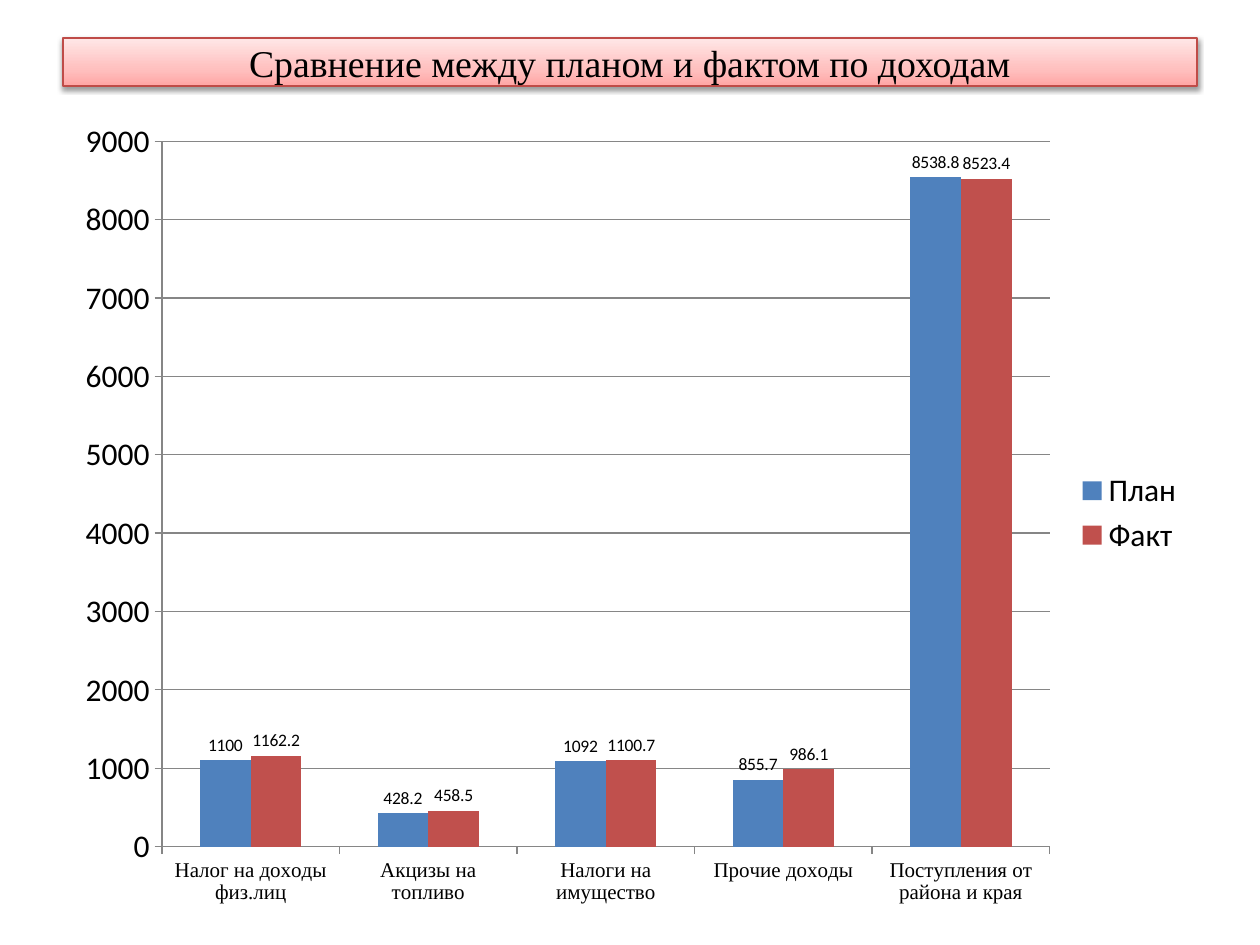
from copy import deepcopy

from lxml import etree
from pptx import Presentation
from pptx import util as u
from pptx.chart.data import CategoryChartData
from pptx.dml.color import RGBColor
from pptx.enum import chart as c
from pptx.enum import shapes, text
from pptx.oxml.ns import qn

PX = u.Inches(1) / 126
COLORS = {
    "text": "000000",
    "banner_bottom": "FFA6A5",
    "banner_middle": "FFC0BF",
    "banner_top": "FFE7E7",
    "banner_line": "BF4C48",
    "axis": "868686",
    "plan": "4F81BD",
    "fact": "C0504D",
}
BANNER_STOPS = [(0, "banner_bottom"), (0.35, "banner_middle"), (1, "banner_top")]
TITLE = "Сравнение между планом и фактом по доходам"
CATEGORIES = [
    "Налог на доходы физ.лиц",
    "Акцизы на топливо",
    "Налоги на имущество",
    "Прочие доходы",
    "Поступления от района и края",
]
SERIES = [
    ("План", "plan", [1100, 428.2, 1092, 855.7, 8538.8]),
    ("Факт", "fact", [1162.2, 458.5, 1100.7, 986.1, 8523.4]),
]


def box(*lengths):
    return [u.Emu(round(length * PX)) for length in lengths]


def color(name):
    return RGBColor.from_string(COLORS[name])


def style_font(font, size, name="Calibri"):
    font.size = u.Pt(size)
    font.name = name
    font.bold = False
    font.color.rgb = color("text")


def fill_gradient(shape, stops):
    shape.fill.gradient()
    shape.fill.gradient_angle = 90
    stop_list = shape._element.spPr.find(qn("a:gradFill")).find(qn("a:gsLst"))
    stop_list.append(deepcopy(stop_list[-1]))
    for stop, (position, name) in zip(shape.fill.gradient_stops, stops):
        stop.position = position
        stop.color.rgb = color(name)


def add_shadow(shape):
    shape.shadow.inherit = False
    effects = shape._element.spPr.find(qn("a:effectLst"))
    shadow = etree.SubElement(effects, qn("a:outerShdw"), blurRad="40000",
                              dist="20000", dir="5400000", rotWithShape="0")
    shade = etree.SubElement(shadow, qn("a:srgbClr"), val=COLORS["text"])
    etree.SubElement(shade, qn("a:alpha"), val="38000")


def add_banner(slide, title, *lengths):
    shape = slide.shapes.add_shape(shapes.MSO_SHAPE.RECTANGLE, *box(*lengths))
    fill_gradient(shape, BANNER_STOPS)
    shape.line.color.rgb = color("banner_line")
    shape.line.width = u.Pt(0.75)
    add_shadow(shape)
    frame = shape.text_frame
    frame.word_wrap = True
    frame.vertical_anchor = text.MSO_ANCHOR.MIDDLE
    paragraph = frame.paragraphs[0]
    paragraph.alignment = text.PP_ALIGN.CENTER
    run = paragraph.add_run()
    run.text = title
    style_font(run.font, 21.6, "Times New Roman")


def style_axis(axis, size, font_name):
    axis.major_tick_mark = c.XL_TICK_MARK.OUTSIDE
    axis.minor_tick_mark = c.XL_TICK_MARK.NONE
    axis.format.line.color.rgb = color("axis")
    axis.format.line.width = u.Pt(0.75)
    style_font(axis.tick_labels.font, size, font_name)


def style_series(series, name):
    series.format.fill.solid()
    series.format.fill.fore_color.rgb = color(name)
    series.invert_if_negative = False
    labels = series.data_labels
    labels.show_value = True
    labels.position = c.XL_LABEL_POSITION.OUTSIDE_END
    style_font(labels.font, 10)


def add_income_chart(slide, *lengths):
    data = CategoryChartData()
    data.categories = CATEGORIES
    for name, _, values in SERIES:
        data.add_series(name, values)
    chart = slide.shapes.add_chart(
        c.XL_CHART_TYPE.COLUMN_CLUSTERED, *box(*lengths), data).chart
    style_font(chart.font, 18)
    chart.has_title = False
    chart.has_legend = True
    chart.legend.position = c.XL_LEGEND_POSITION.RIGHT
    chart.legend.include_in_layout = False
    style_font(chart.legend.font, 18)
    style_axis(chart.category_axis, 12, "Times New Roman")
    style_axis(chart.value_axis, 18, "Calibri")
    chart.value_axis.has_major_gridlines = True
    gridline = chart.value_axis.major_gridlines.format.line
    gridline.color.rgb = color("axis")
    gridline.width = u.Pt(0.75)
    plot = chart.plots[0]
    plot.vary_by_categories = False
    plot.gap_width = 150
    plot.overlap = 0
    for series, (_, color_name, _) in zip(plot.series, SERIES):
        style_series(series, color_name)


def main():
    presentation = Presentation()
    presentation.slide_width, presentation.slide_height = box(1260, 945)
    slide = presentation.slides.add_slide(presentation.slide_layouts[6])
    add_banner(slide, TITLE, 63, 38, 1134, 48)
    add_income_chart(slide, 63, 106, 1134, 814)
    presentation.save("out.pptx")


if __name__ == "__main__":
    main()
